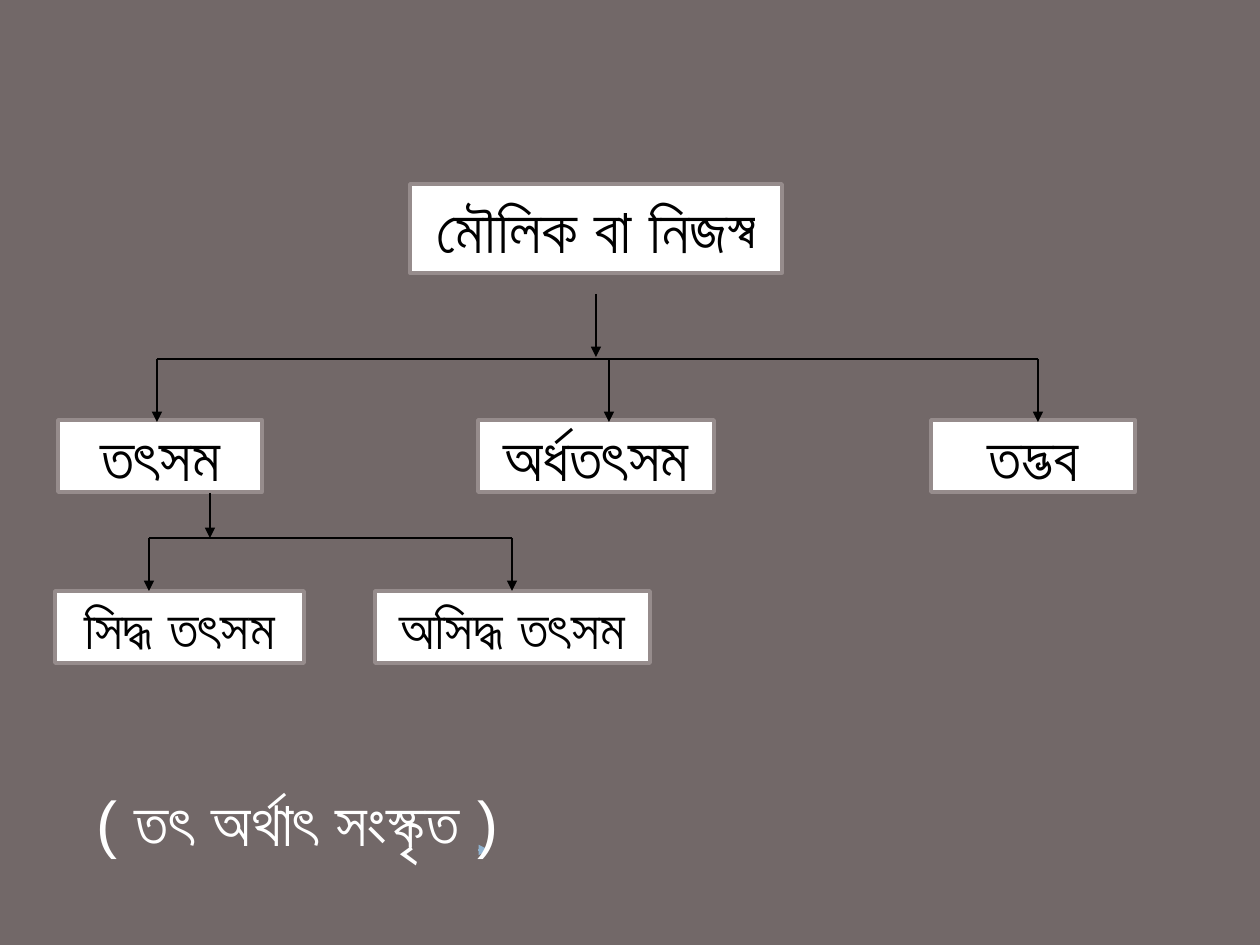
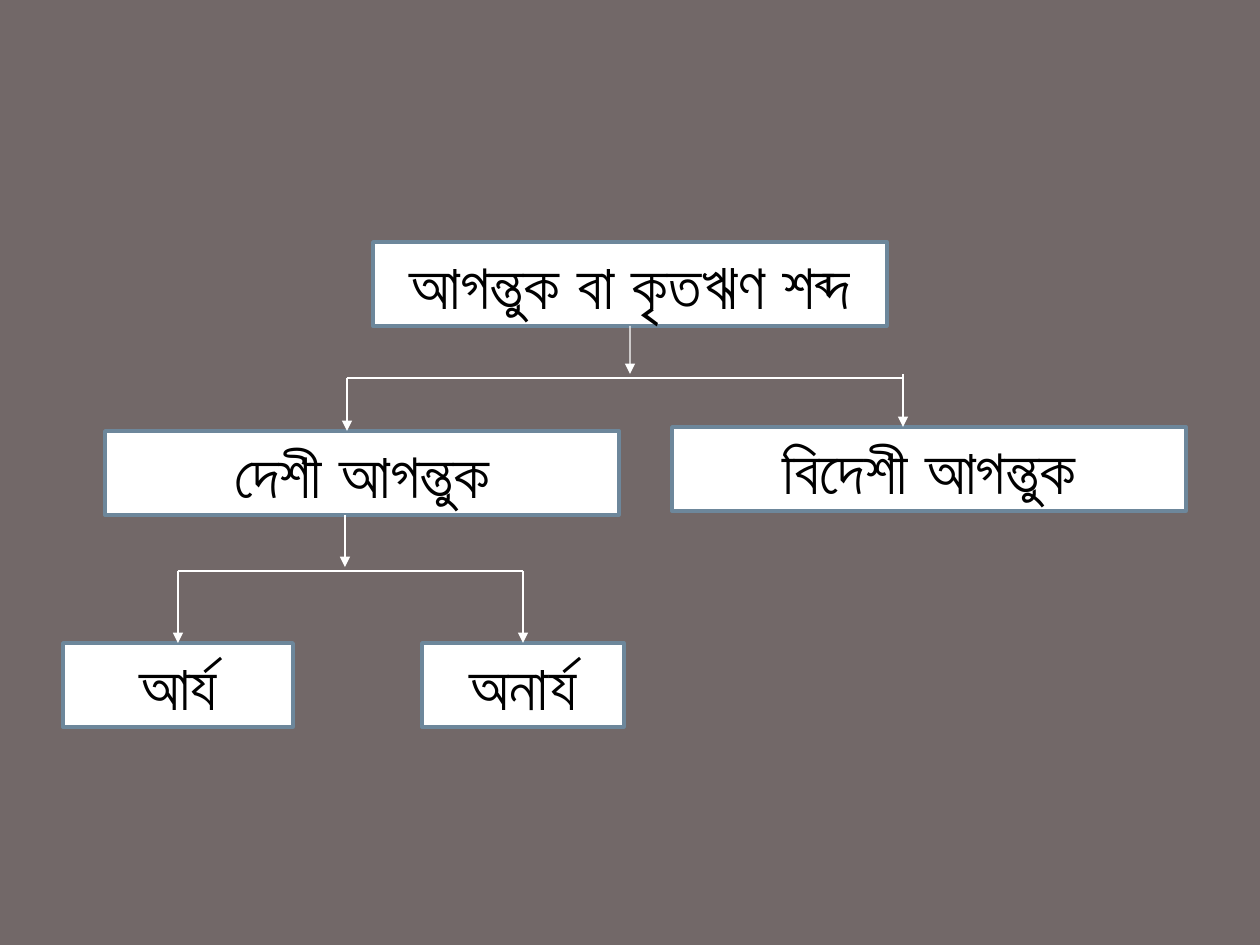
"""Builds two word-class tree slides in Bengali."""
from pptx import Presentation
from pptx.dml.color import RGBColor
from pptx.enum.shapes import MSO_CONNECTOR, MSO_SHAPE
from pptx.enum.text import MSO_ANCHOR, MSO_AUTO_SIZE, PP_ALIGN
from pptx.oxml.ns import qn
from pptx.util import Emu, Pt
from lxml import etree

STRAIGHT = MSO_CONNECTOR.STRAIGHT
PROCESS, RECTANGLE = MSO_SHAPE.FLOWCHART_PROCESS, MSO_SHAPE.RECTANGLE
MIDDLE, CENTER, LEFT = MSO_ANCHOR.MIDDLE, PP_ALIGN.CENTER, PP_ALIGN.LEFT
GROW = MSO_AUTO_SIZE.SHAPE_TO_FIT_TEXT

BLACK = RGBColor(0x00, 0x00, 0x00)
WHITE = RGBColor(0xFF, 0xFF, 0xFF)
BACKGROUND = RGBColor(0x72, 0x68, 0x68)
GREY_EDGE = RGBColor(0x96, 0x8C, 0x8C)
BLUE_EDGE = RGBColor(0x6D, 0x87, 0x9B)
PALE_BLUE = RGBColor(0x8F, 0xB2, 0xCF)

FONT = "Arial"
EMU_PER_PX = 914400 / 126
TOP, BOTTOM = 0, 2

# boxes: text, size, (left, top, width, height)
# branches: stem (x, top, bottom), bar height, drops (x, top, bottom)
SLIDES = [
    {
        "shape": PROCESS, "edge": GREY_EDGE, "ink": BLACK,
        "boxes": [
            ("মৌলিক বা নিজস্ব", 36, (410, 184, 372, 89)),
            ("তৎসম", 36, (58, 420, 204, 72)),
            ("অর্ধতৎসম", 36, (478, 420, 236, 72)),
            ("তদ্ভব", 36, (931, 420, 204, 72)),
            ("সিদ্ধ তৎসম", 32, (55, 591, 249, 72)),
            ("অসিদ্ধ তৎসম", 32, (375, 591, 275, 72)),
        ],
        "branches": [
            ((596, 294, 357), 359, [(157, 359, 422), (609, 359, 422), (1038, 359, 422)]),
            ((210, 493, 538), 538, [(149, 538, 591), (512, 538, 591)]),
        ],
        "small_arrows": [(478, 850, 489, 850)],
        "notes_below": [("( তৎ অর্থাৎ সংস্কৃত )", 36, (84, 777, 698, 89))],
    },
    {
        "shape": RECTANGLE, "edge": BLUE_EDGE, "ink": WHITE,
        "boxes": [
            ("আগন্তুক বা কৃতঋণ শব্দ", 36, (373, 242, 514, 84)),
            ("দেশী আগন্তুক", 36, (105, 431, 514, 84)),
            ("বিদেশী আগন্তুক", 36, (672, 427, 514, 84)),
            ("আর্য", 36, (63, 643, 230, 84)),
            ("অনার্য", 36, (422, 643, 202, 84)),
        ],
        "branches": [
            ((630, 326, 374), 378, [(347, 378, 431), (903, 374, 427)]),
            ((345, 515, 567), 571, [(178, 571, 643), (523, 571, 643)]),
        ],
        "small_arrows": [],
        "notes_below": [],
    },
]


def px(value):
    return Emu(round(value * EMU_PER_PX))


def write(box, text, size, color, align):
    para = box.text_frame.paragraphs[0]
    para.alignment = align
    span = para.add_run()
    span.text = text
    for name, value in {"name": FONT, "size": Pt(size)}.items():
        setattr(span.font, name, value)
    span.font.color.rgb = color
    etree.SubElement(span.font._element, qn("a:cs"), typeface=FONT)


def add_box(page, shape, edge, text, size, place):
    box = page.shapes.add_shape(shape, *map(px, place))
    box.shadow.inherit = False
    box.fill.solid()
    box.fill.fore_color.rgb = WHITE
    box.line.color.rgb = edge
    box.line.width = Pt(2)
    box.text_frame.vertical_anchor = MIDDLE
    write(box, text, size, BLACK, CENTER)
    return box


def add_line(page, ends, color, sites, arrow=True):
    line = page.shapes.add_connector(STRAIGHT, *map(px, ends))
    line.line.color.rgb = color
    line.line.width = Pt(0.75)
    if arrow:
        etree.SubElement(line.line._get_or_add_ln(), qn("a:tailEnd"), type="triangle")
    etree.SubElement(line._element.spPr, qn("a:effectLst"))
    for point, connect in ((ends[:2], line.begin_connect), (ends[2:], line.end_connect)):
        if point in sites:
            connect(*sites[point])


def add_note(page, text, size, place):
    box = page.shapes.add_textbox(*map(px, place))
    box.text_frame.word_wrap = True
    box.text_frame.auto_size = GROW
    write(box, text, size, WHITE, LEFT)


def build_page(deck, content):
    page = deck.slides.add_slide(deck.slide_layouts[6])
    page.background.fill.solid()
    page.background.fill.fore_color.rgb = BACKGROUND
    sites = {}
    for text, size, place in content["boxes"]:
        box = add_box(page, content["shape"], content["edge"], text, size, place)
        left, top, width, height = place
        sites[left + width / 2, top] = (box, TOP)
        sites[left + width / 2, top + height] = (box, BOTTOM)
    ink = content["ink"]
    for stem, bar, drops in content["branches"]:
        for x, top, bottom in [stem, *drops]:
            add_line(page, (x, top, x, bottom), ink, sites)
        add_line(page, (drops[0][0], bar, drops[-1][0], bar), ink, sites, arrow=False)
    for ends in content["small_arrows"]:
        add_line(page, ends, PALE_BLUE, sites)
    for note in content["notes_below"]:
        add_note(page, *note)


def main():
    deck = Presentation()
    deck.slide_width, deck.slide_height = px(1260), px(945)
    for content in SLIDES:
        build_page(deck, content)
    deck.save("out.pptx")


if __name__ == "__main__":
    main()
